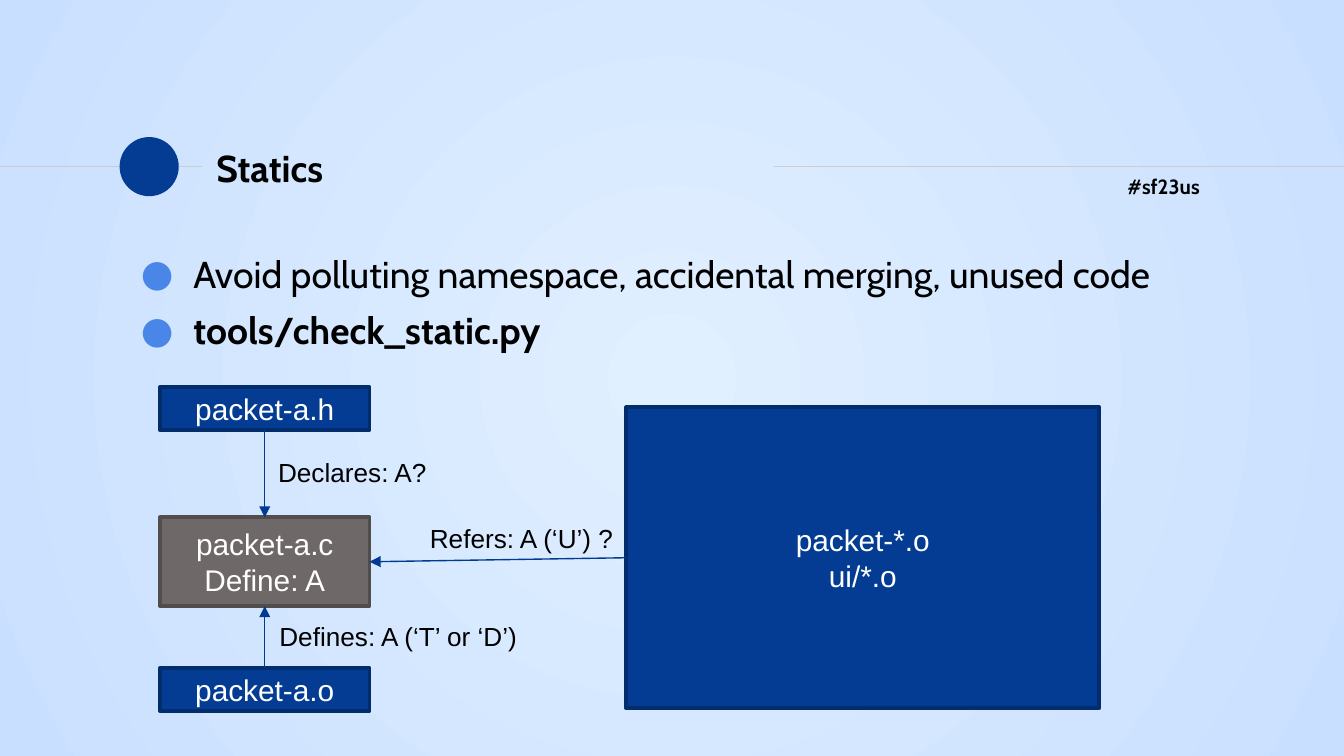
from pptx import Presentation
from pptx.dml.color import RGBColor
from pptx.enum import shapes, text
from pptx.oxml import ns, parse_xml
from pptx.util import Inches, Pt

BLUE, BLUE_EDGE = "033C92", "022C6C"
GREY, GREY_EDGE = "6F6868", "524D4D"
ARROW, RULE, BULLET = "003A92", "CCCCCC", "4A86E8"
BLACK, WHITE = "000000", "FFFFFF"
TOP, LEFT, BOTTOM, RIGHT = range(4)


def rgb(value):
    return RGBColor.from_string(value)


def element(tag, **attrs):
    el = parse_xml(f"<{tag} {ns.nsdecls('a')}/>")
    for name, value in attrs.items():
        el.set(name, value)
    return el


def set_background(s, centre, edge):
    fill = s.background.fill
    fill.gradient()
    for stop, colour, position in zip(fill.gradient_stops, (centre, edge), (0, 1)):
        stop.color.rgb = rgb(colour)
        stop.position = position
    grad = s._element.find(".//" + ns.qn("a:gradFill"))
    grad.remove(grad.find(ns.qn("a:lin")))
    path = element("a:path", path="circle")
    path.append(element("a:fillToRect", l="50000", t="50000", r="50000", b="50000"))
    grad.append(path)


def style_text(tf, size, font, colour, bold=False, align=text.PP_ALIGN.LEFT):
    for p in tf.paragraphs:
        p.alignment = align
        for r in p.runs:
            r.font.size = Pt(size)
            r.font.name = font
            r.font.bold = bold
            r.font.color.rgb = rgb(colour)


def set_margins(tf, size=0.1):
    tf.margin_left = tf.margin_right = Inches(size)
    tf.margin_top = tf.margin_bottom = Inches(size)


def add_text(s, words, x, y, w, h, wrap=True):
    tf = s.shapes.add_textbox(Inches(x), Inches(y), Inches(w), Inches(h)).text_frame
    tf.word_wrap = wrap
    tf.text = words
    return tf


def add_label(s, words, x, y, w, wrap=False):
    tf = add_text(s, words, x, y, w, 0.34, wrap)
    style_text(tf, 14, "Arial", BLACK)


def add_shape(s, kind, x, y, w, h, fill):
    sp = s.shapes.add_shape(kind, Inches(x), Inches(y), Inches(w), Inches(h))
    sp.shadow.inherit = False
    sp.fill.solid()
    sp.fill.fore_color.rgb = rgb(fill)
    sp.line.fill.background()
    return sp


def add_box(s, words, x, y, w, h, fill=BLUE, edge=BLUE_EDGE):
    sp = add_shape(s, shapes.MSO_SHAPE.RECTANGLE, x, y, w, h, fill)
    sp.line.color.rgb = rgb(edge)
    sp.line.width = Pt(2)
    tf = sp.text_frame
    tf.text = words
    tf.vertical_anchor = text.MSO_ANCHOR.MIDDLE
    style_text(tf, 16, "Arial", WHITE, align=text.PP_ALIGN.CENTER)
    return sp


def add_line(s, x1, x2, y, colour):
    line = s.shapes.add_connector(
        shapes.MSO_CONNECTOR.STRAIGHT, Inches(x1), Inches(y), Inches(x2), Inches(y))
    line.line.color.rgb = rgb(colour)
    line.line.width = Pt(0.75)
    line._element.spPr.append(element("a:effectLst"))
    return line


def add_arrow(s, start, start_side, end, end_side):
    arrow = add_line(s, 0, 1, 0, ARROW)
    arrow.begin_connect(start, start_side)
    arrow.end_connect(end, end_side)
    arrow.line._get_or_add_ln().append(element("a:tailEnd", type="triangle"))


def add_title(s, words):
    sp = s.shapes.title
    sp.left, sp.top = Inches(1.51), Inches(1.01)
    sp.width, sp.height = Inches(4.24), Inches(0.48)
    tf = sp.text_frame
    tf.text = words
    tf.vertical_anchor = text.MSO_ANCHOR.MIDDLE
    set_margins(tf)
    style_text(tf, 20, "Cabin", BLACK, bold=True)


def add_bullets(s, items):
    tf = add_text(s, "\n".join(items), 0.84, 1.77, 8.56, 3.53)
    set_margins(tf)
    for p in tf.paragraphs:
        pPr = p._p.get_or_add_pPr()
        pPr.set("marL", str(Inches(0.5)))
        pPr.set("indent", str(Inches(-0.39)))
        colour = element("a:buClr")
        colour.append(element("a:srgbClr", val=BULLET))
        pPr.append(colour)
        pPr.append(element("a:buFont", typeface="Cabin"))
        pPr.append(element("a:buChar", char="●"))
    for p in tf.paragraphs[1:]:
        p.space_before = Pt(6)
    style_text(tf, 20, "Cabin", BLACK)
    tf.paragraphs[-1].runs[0].font.bold = True


def add_header(s):
    tag = add_text(s, "#sf23us", 8.29, 1.2, 1.12, 0.57)
    set_margins(tag)
    style_text(tag, 11, "Cabin", BLACK, bold=True)
    add_line(s, 0, 1.5, 1.24, RULE)
    add_shape(s, shapes.MSO_SHAPE.OVAL, 0.89, 1.02, 0.44, 0.44, BLUE)
    add_line(s, 5.76, 10, 1.24, RULE)
    add_title(s, "Statics")


def add_diagram(s):
    x, w = 1.19, 1.56
    header = add_box(s, "packet-a.h", x, 2.88, w, 0.32)
    source = add_box(s, "packet-a.c\nDefine: A", x, 3.85, w, 0.66, GREY, GREY_EDGE)
    compiled = add_box(s, "packet-a.o", x, 4.97, w, 0.32)
    others = add_box(s, "packet-*.o\nui/*.o", 4.66, 3.03, 3.52, 2.24)
    add_arrow(s, header, BOTTOM, source, TOP)
    add_arrow(s, compiled, TOP, source, BOTTOM)
    add_arrow(s, others, LEFT, source, RIGHT)
    add_label(s, "Declares: A?", 1.97, 3.35, 1.32)
    add_label(s, "Defines: A (‘T’ or ‘D’)", 1.98, 4.57, 2.01)
    add_label(s, "Refers: A (‘U’) ?", 3.1, 3.84, 1.66, wrap=True)


def main():
    prs = Presentation()
    prs.slide_width = Inches(10)
    prs.slide_height = prs.slide_width * 9 // 16
    s = prs.slides.add_slide(prs.slide_layouts[5])
    set_background(s, "E1F0FF", "C9DFFF")
    add_header(s)
    add_bullets(s, ["Avoid polluting namespace, accidental merging, unused code",
                    "tools/check_static.py"])
    add_diagram(s)
    prs.save("out.pptx")


if __name__ == "__main__":
    main()
